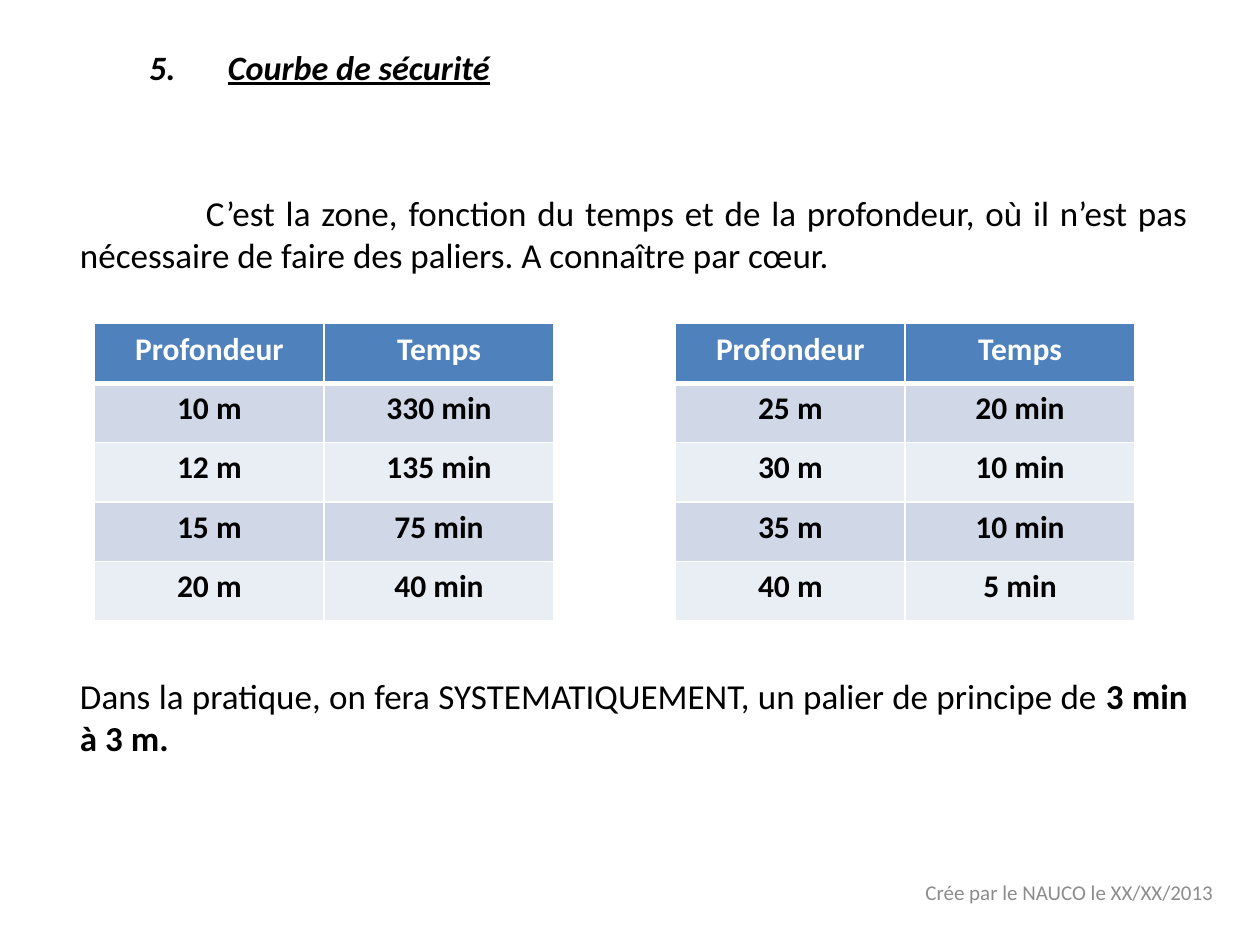
from lxml import etree
from pptx import Presentation
from pptx.dml.color import RGBColor
from pptx.enum.text import MSO_ANCHOR, MSO_AUTO_SIZE, PP_ALIGN
from pptx.oxml.ns import qn
from pptx.util import Pt

LEFT, CENTER, RIGHT, JUSTIFY = PP_ALIGN.LEFT, PP_ALIGN.CENTER, PP_ALIGN.RIGHT, PP_ALIGN.JUSTIFY
TOP, MIDDLE = MSO_ANCHOR.TOP, MSO_ANCHOR.MIDDLE
NO_FIT = MSO_AUTO_SIZE.NONE
FONT = "Calibri"
BLACK, WHITE, GREY = "000000", "FFFFFF", "8C8C8C"
HEADER_FILL, BAND_FILLS = "4F81BD", ("D0D8E8", "E9EDF4")

DEFINITION = (
    "C’est la zone, fonction du temps et de la profondeur, où il n’est pas "
    "nécessaire de faire des paliers. A connaître par cœur."
)
PRACTICE = "Dans la pratique, on fera SYSTEMATIQUEMENT, un palier de principe de "
SAFETY_STOP = "3 min à 3 m."
HEADINGS = ("Profondeur", "Temps")
SHALLOW_LIMITS = (("10 m", "330 min"), ("12 m", "135 min"), ("15 m", "75 min"), ("20 m", "40 min"))
DEEP_LIMITS = (("25 m", "20 min"), ("30 m", "10 min"), ("35 m", "10 min"), ("40 m", "5 min"))


def color(value):
    """Turn a hex string into a colour."""
    return RGBColor.from_string(value)


def place(shape, box, anchor):
    """Move a text shape into its box and fix its wrapping and anchor."""
    shape.left, shape.top, shape.width, shape.height = (Pt(length) for length in box)
    frame = shape.text_frame
    frame.auto_size = NO_FIT
    frame.word_wrap = True
    frame.vertical_anchor = anchor
    return frame


def format_para(para, size, align, ink=BLACK, bold=False):
    """Align a paragraph and format all its runs."""
    para.alignment = align
    for span in para.runs:
        span.font.name = FONT
        span.font.size = Pt(size)
        span.font.bold = bold
        span.font.color.rgb = color(ink)


def indent(para, margin, first_line, bullet, **attributes):
    """Set a paragraph's indents and its bullet element."""
    properties = para._p.get_or_add_pPr()
    properties.set("marL", str(Pt(margin)))
    properties.set("indent", str(Pt(first_line)))
    etree.SubElement(properties, qn(bullet), attributes)


def add_title(page, box):
    """Write the numbered section title."""
    frame = place(page.shapes.title, box, MIDDLE)
    frame.text = "Courbe de sécurité"
    para = frame.paragraphs[0]
    format_para(para, 19.5, LEFT, bold=True)
    para.runs[0].font.italic = True
    para.runs[0].font.underline = True
    indent(para, 45, -45, "a:buAutoNum", type="arabicPeriod", startAt="5")


def add_body(page, box):
    """Write the definition and the advice, leaving room for the tables."""
    frame = place(page.placeholders[1], box, TOP)
    frame.text = DEFINITION
    definition = frame.paragraphs[0]
    practice = frame.add_paragraph()
    practice.text = PRACTICE
    stop = practice.add_run()
    stop.text = SAFETY_STOP
    for para, space, first_line in ((definition, 4, 72), (practice, 228, 0)):
        format_para(para, 20, JUSTIFY)
        para.space_before = Pt(space)
        indent(para, 0, first_line, "a:buNone")
    stop.font.bold = True


def add_border(cell, side, width):
    """Draw one white border of a cell."""
    line = etree.SubElement(cell._tc.get_or_add_tcPr(), qn(f"a:ln{side}"), w=str(Pt(width)))
    fill = etree.SubElement(line, qn("a:solidFill"))
    etree.SubElement(fill, qn("a:srgbClr"), val=WHITE)


def add_limits(page, box, limits):
    """Add a table of depths and dive times."""
    rows = (HEADINGS, *limits)
    left, top, width, height = (Pt(length) for length in box)
    table = page.shapes.add_table(len(rows), len(HEADINGS), left, top, width, height).table
    for row, texts in enumerate(rows):
        for column, text in enumerate(texts):
            cell = table.cell(row, column)
            cell.text = text
            cell.vertical_anchor = TOP
            format_para(cell.text_frame.paragraphs[0], 18, CENTER, BLACK if row else WHITE, True)
            for side, width in (("L", 1), ("R", 1), ("T", 3 if row == 1 else 1), ("B", 1 if row else 3)):
                add_border(cell, side, width)
            cell.fill.solid()
            cell.fill.fore_color.rgb = color(BAND_FILLS[(row - 1) % 2] if row else HEADER_FILL)


def add_credit(page, box):
    """Write the author line at the foot of the page."""
    frame = place(page.shapes.add_textbox(0, 0, 0, 0), box, MIDDLE)
    frame.text = "Crée par le NAUCO le XX/XX/2013"
    format_para(frame.paragraphs[0], 12, RIGHT, GREY)


def main():
    """Build the safety curve slide."""
    deck = Presentation()
    deck.slide_width, deck.slide_height = Pt(720), Pt(540)
    page = deck.slides.add_slide(deck.slide_layouts[1])
    add_credit(page, (472, 495, 228.5, 29))
    add_title(page, (78, 21, 572, 34))
    add_body(page, (38.5, 106, 647.5, 342))
    for left, limits in ((54, SHALLOW_LIMITS), (386, DEEP_LIMITS)):
        add_limits(page, (left, 185, 262.6, 170), limits)
    deck.save("out.pptx")


if __name__ == "__main__":
    main()
